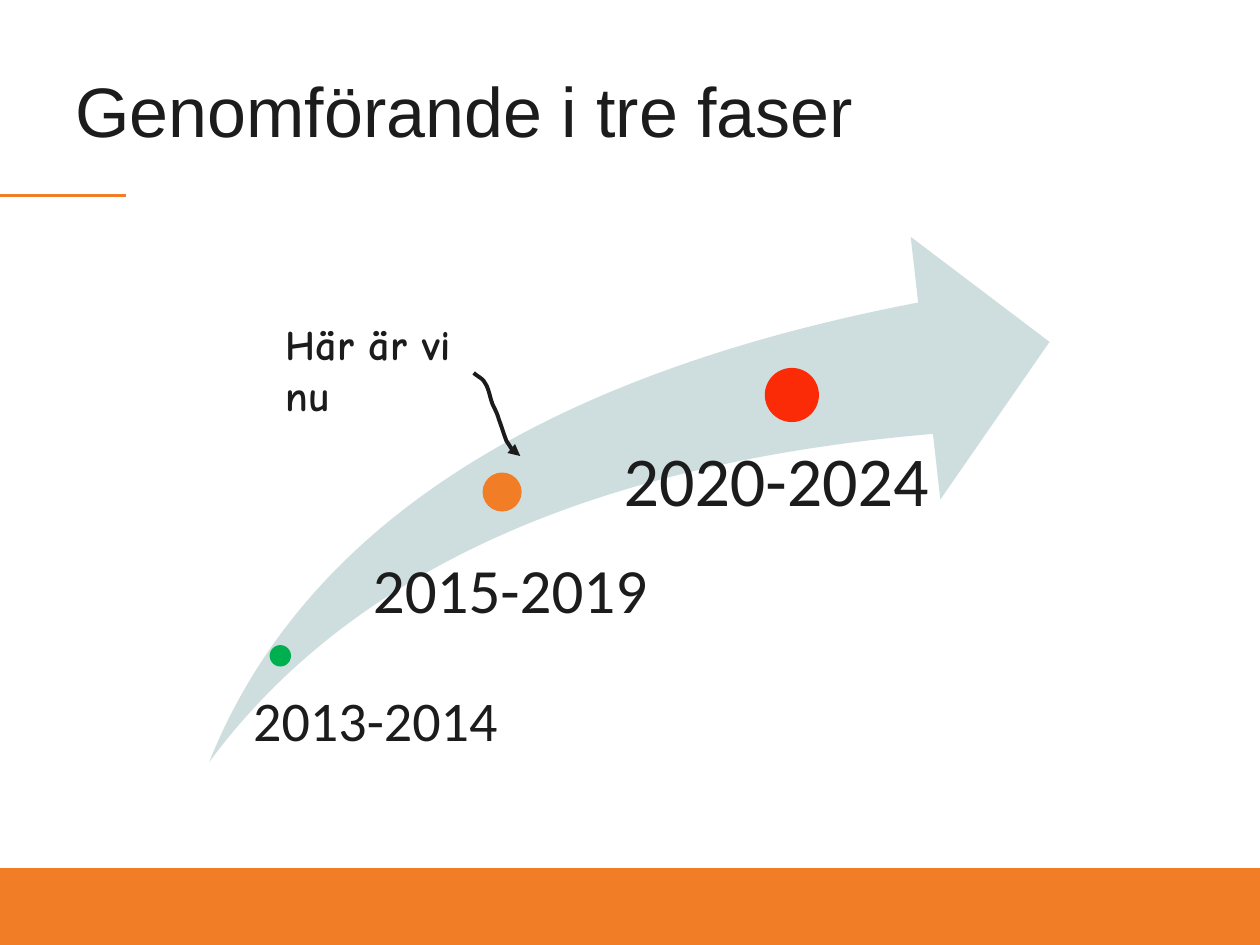
from dataclasses import dataclass

from lxml.etree import SubElement
from pptx import Presentation
from pptx.dml.color import RGBColor
from pptx.enum.shapes import MSO_CONNECTOR, MSO_SHAPE
from pptx.enum.text import MSO_ANCHOR, MSO_AUTO_SIZE, PP_ALIGN
from pptx.oxml.ns import qn
from pptx.util import Inches, Pt

COLORS = {
    "text": "1C1C1C",
    "pointer": "1B1B1B",
    "orange": "F17E26",
    "swoosh": "CEDEDF",
    "green": "00B050",
    "red": "FC2B07",
}

Box = tuple[float, float, float, float]
Point = tuple[float, float]


@dataclass
class Phase:
    years: str
    color: str
    dot: Point
    diameter: float
    label: Box
    inset: float
    size: int


PHASES = [
    Phase("2013-2014", "green", (2.14, 5.12), 0.17, (1.92, 5.5, 2.37, 0.5), 0.09, 32),
    Phase("2015-2019", "orange", (3.83, 3.75), 0.31, (2.79, 4.44, 2.8, 0.59), 0.17, 36),
    Phase("2020-2024", "red", (6.07, 2.92), 0.43, (4.72, 3.54, 2.91, 0.8), 0.23, 40),
]

# Bézier curves: start, then two controls and an end for each segment.
POINTER = [
    (3.76, 2.96),
    (3.79, 2.99), (3.83, 3.0), (3.85, 3.04),
    (3.88, 3.08), (3.89, 3.16), (3.91, 3.21),
    (3.93, 3.25), (3.95, 3.29), (3.96, 3.33),
    (3.98, 3.38), (4.0, 3.45), (4.02, 3.5),
    (4.04, 3.53), (4.06, 3.56), (4.07, 3.58),
    (4.09, 3.6), (4.13, 3.62), (4.13, 3.62),
]


def rgb(name: str) -> RGBColor:
    return RGBColor.from_string(COLORS[name])


def format_text(paragraph, font_name: str, size: int, bold: bool = False) -> None:
    paragraph.alignment = PP_ALIGN.LEFT
    for run in paragraph.runs:
        run.font.name = font_name
        run.font.size = Pt(size)
        run.font.bold = bold
        run.font.color.rgb = rgb("text")


def add_filled(slide, kind: MSO_SHAPE, box: Box, color: str):
    shape = slide.shapes.add_shape(kind, *map(Inches, box))
    shape.shadow.inherit = False
    shape.fill.solid()
    shape.fill.fore_color.rgb = rgb(color)
    shape.line.fill.background()
    return shape


def add_frame(slide) -> None:
    """Draw the footer band and the short rule under the title."""
    add_filled(slide, MSO_SHAPE.RECTANGLE, (0, 6.89, 10, 0.61), "orange")
    rule = slide.shapes.add_connector(
        MSO_CONNECTOR.STRAIGHT, 0, Inches(1.55), Inches(1), Inches(1.55))
    rule.line.color.rgb = rgb("orange")
    rule.line.width = Pt(1.5)
    SubElement(rule._element.spPr, qn("a:effectLst"))


def set_title(slide, text: str) -> None:
    title = slide.shapes.title
    title.left, title.top, title.width, title.height = map(Inches, (0.5, 0.31, 9, 1.25))
    frame = title.text_frame
    frame.text = text
    frame.auto_size = MSO_AUTO_SIZE.NONE
    frame.vertical_anchor = MSO_ANCHOR.MIDDLE
    frame.paragraphs[0].line_spacing = 0.8
    format_text(frame.paragraphs[0], "Arial", 40)


def add_phase(slide, phase: Phase) -> None:
    add_filled(slide, MSO_SHAPE.OVAL,
               (*phase.dot, phase.diameter, phase.diameter), phase.color)
    frame = slide.shapes.add_textbox(*map(Inches, phase.label)).text_frame
    frame.word_wrap = True
    frame.margin_left = Inches(phase.inset)
    frame.margin_top = frame.margin_right = frame.margin_bottom = 0
    frame.text = phase.years
    frame.paragraphs[0].line_spacing = 0.9
    format_text(frame.paragraphs[0], "Calibri", phase.size)


def curve_points(nodes: list[Point], steps: int = 6) -> list[Point]:
    """Sample a chain of cubic Bézier segments."""
    points = [nodes[0]]
    for start in range(0, len(nodes) - 1, 3):
        segment = nodes[start:start + 4]
        for step in range(1, steps + 1):
            t = step / steps
            weights = ((1 - t) ** 3, 3 * t * (1 - t) ** 2, 3 * t * t * (1 - t), t ** 3)
            points.append(tuple(
                sum(weight * node[axis] for weight, node in zip(weights, segment))
                for axis in (0, 1)))
    return points


def add_pointer(slide) -> None:
    points = [(Inches(x), Inches(y)) for x, y in curve_points(POINTER)]
    builder = slide.shapes.build_freeform(*points[0])
    builder.add_line_segments(points[1:], close=False)
    pointer = builder.convert_to_shape()
    pointer.shadow.inherit = False
    pointer.fill.background()
    pointer.line.color.rgb = rgb("pointer")
    pointer.line.width = Pt(2.25)
    SubElement(pointer.line._get_or_add_ln(), qn("a:tailEnd"), type="triangle")


def add_note(slide, text: str) -> None:
    note = slide.shapes.add_textbox(*map(Inches, (2.17, 2.48, 1.9, 0.5)))
    note.text_frame.word_wrap = True
    note.text_frame.text = text
    format_text(note.text_frame.paragraphs[0], "Comic Neue", 24, bold=True)


def main() -> None:
    presentation = Presentation()
    presentation.slide_width = Inches(10)
    presentation.slide_height = Inches(7.5)
    slide = presentation.slides.add_slide(presentation.slide_layouts[5])

    add_frame(slide)
    set_title(slide, "Genomförande i tre faser")
    swoosh = add_filled(slide, MSO_SHAPE.SWOOSH_ARROW, (1.66, 1.88, 6.67, 4.17), "swoosh")
    swoosh.adjustments[0] = 0.25
    swoosh.adjustments[1] = 0.25
    for phase in PHASES:
        add_phase(slide, phase)
    add_pointer(slide)
    add_note(slide, "Här är vi nu")

    presentation.save("out.pptx")


if __name__ == "__main__":
    main()
